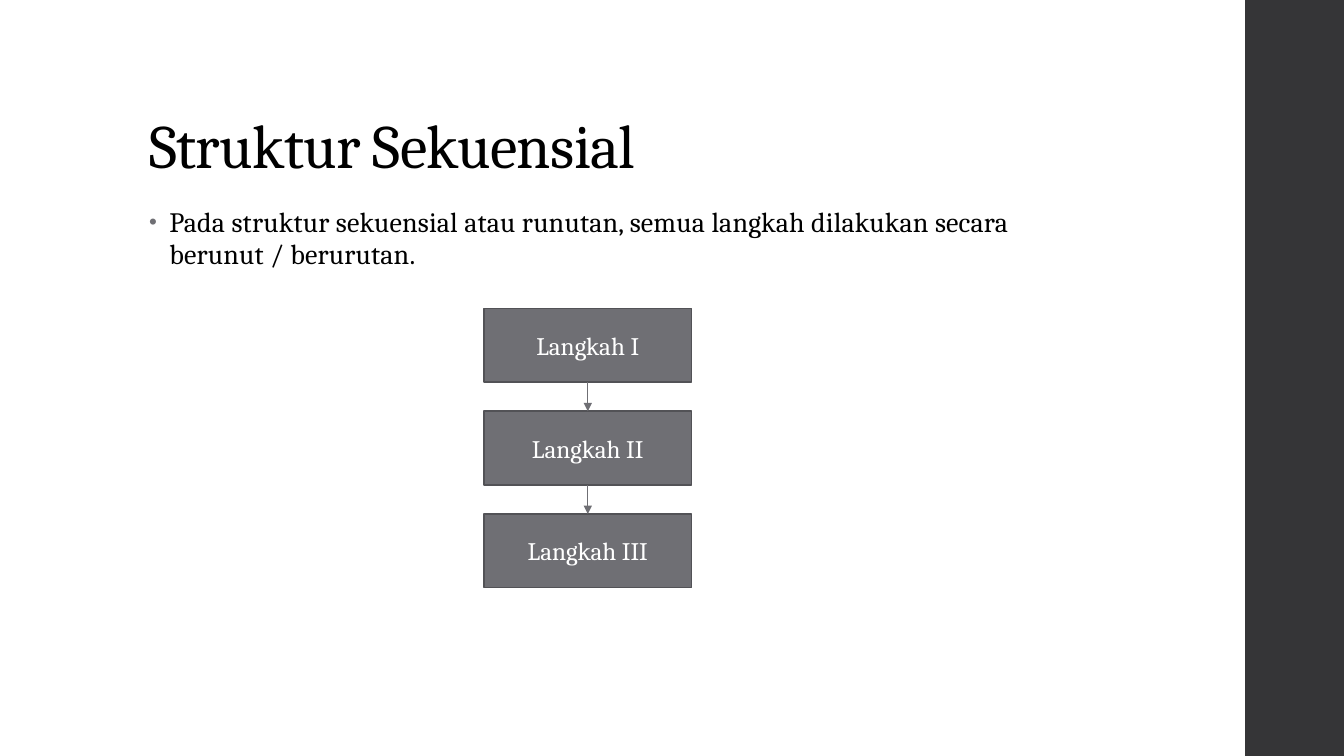
"""Build the slide about sequential structure with a three-step flow."""
from itertools import pairwise

from lxml.etree import SubElement
from pptx import Presentation
from pptx.dml.color import RGBColor
from pptx.enum.shapes import MSO_CONNECTOR, MSO_SHAPE
from pptx.enum.text import MSO_ANCHOR, MSO_AUTO_SIZE, PP_ALIGN
from pptx.oxml.ns import qn
from pptx.util import Inches, Pt

TITLE = "Struktur Sekuensial"
BODY = "Pada struktur sekuensial atau runutan, semua langkah dilakukan secara berunut / berurutan."
STEPS = ["Langkah I", "Langkah II", "Langkah III"]

COLORS = {
    "background": "FFFFFF",
    "sidebar": "353537",
    "text": "000000",
    "step": "6F6F74",
    "step_border": "525256",
    "step_text": "FFFFFF",
}
FONT = "Cambria"
STEP_LEFT, STEP_TOP, STEP_WIDTH, STEP_HEIGHT, STEP_PITCH = 4.8, 3.06, 2.06, 0.73, 1.02


def color(name):
    return RGBColor.from_string(COLORS[name])


def place(shape, left, top, width, height):
    shape.left, shape.top = Inches(left), Inches(top)
    shape.width, shape.height = Inches(width), Inches(height)


def style_text(shape, text, size, color_name, align, anchor):
    frame = shape.text_frame
    frame.text = text
    frame.word_wrap = True
    frame.auto_size = MSO_AUTO_SIZE.NONE
    frame.vertical_anchor = anchor
    para = frame.paragraphs[0]
    para.alignment = align
    para.font.name = FONT
    para.font.size = Pt(size)
    para.font.color.rgb = color(color_name)
    return para


def set_tracking(para, hundredths):
    para._p.pPr.find(qn("a:defRPr")).set("spc", str(hundredths))


def add_bullet(para, indent):
    properties = para._p.pPr
    properties.set("marL", str(Inches(indent)))
    properties.set("indent", str(-Inches(indent)))
    defaults = properties.find(qn("a:defRPr"))
    bullet_color = SubElement(properties, qn("a:buClr"))
    SubElement(bullet_color, qn("a:srgbClr"), val=COLORS["step"])
    SubElement(properties, qn("a:buSzPct"), val="80000")
    SubElement(properties, qn("a:buFont"), typeface="Arial")
    SubElement(properties, qn("a:buChar"), char="•")
    properties.append(defaults)


def add_rectangle(page, left, top, width, height, fill):
    box = page.shapes.add_shape(
        MSO_SHAPE.RECTANGLE, Inches(left), Inches(top), Inches(width), Inches(height))
    box.shadow.inherit = False
    box.fill.solid()
    box.fill.fore_color.rgb = color(fill)
    box.line.fill.background()
    return box


def add_step(page, index, label):
    box = add_rectangle(
        page, STEP_LEFT, STEP_TOP + index * STEP_PITCH, STEP_WIDTH, STEP_HEIGHT, "step")
    box.line.color.rgb = color("step_border")
    box.line.width = Pt(1.1)
    style_text(box, label, 18, "step_text", PP_ALIGN.CENTER, MSO_ANCHOR.MIDDLE)
    return box


def add_arrow(page, upper, lower):
    arrow = page.shapes.add_connector(MSO_CONNECTOR.STRAIGHT, 0, 0, 0, 0)
    arrow.begin_connect(upper, 2)
    arrow.end_connect(lower, 0)
    arrow.line.color.rgb = color("step")
    arrow.line.width = Pt(0.75)
    SubElement(arrow.line._get_or_add_ln(), qn("a:tailEnd"), type="triangle")
    SubElement(arrow._element.spPr, qn("a:effectLst"))


def main():
    deck = Presentation()
    deck.slide_width, deck.slide_height = Inches(13.33), Inches(7.5)
    page = deck.slides.add_slide(deck.slide_layouts[1])
    page.background.fill.solid()
    page.background.fill.fore_color.rgb = color("background")

    add_rectangle(page, 12.35, 0, 0.98, 7.5, "sidebar")

    title = page.shapes.title
    place(title, 1.38, 0.4, 10.6, 1.45)
    para = style_text(title, TITLE, 44, "text", PP_ALIGN.LEFT, MSO_ANCHOR.BOTTOM)
    para.line_spacing = 0.9
    set_tracking(para, -50)

    body = page.placeholders[1]
    place(body, 1.38, 2, 9.4, 4.76)
    para = style_text(body, BODY, 20, "text", PP_ALIGN.LEFT, MSO_ANCHOR.TOP)
    para.line_spacing = 0.95
    para.space_before, para.space_after = Pt(14), Pt(2)
    set_tracking(para, 10)
    add_bullet(para, 0.2)

    boxes = [add_step(page, index, label) for index, label in enumerate(STEPS)]
    for upper, lower in pairwise(boxes):
        add_arrow(page, upper, lower)

    deck.save("out.pptx")


if __name__ == "__main__":
    main()
